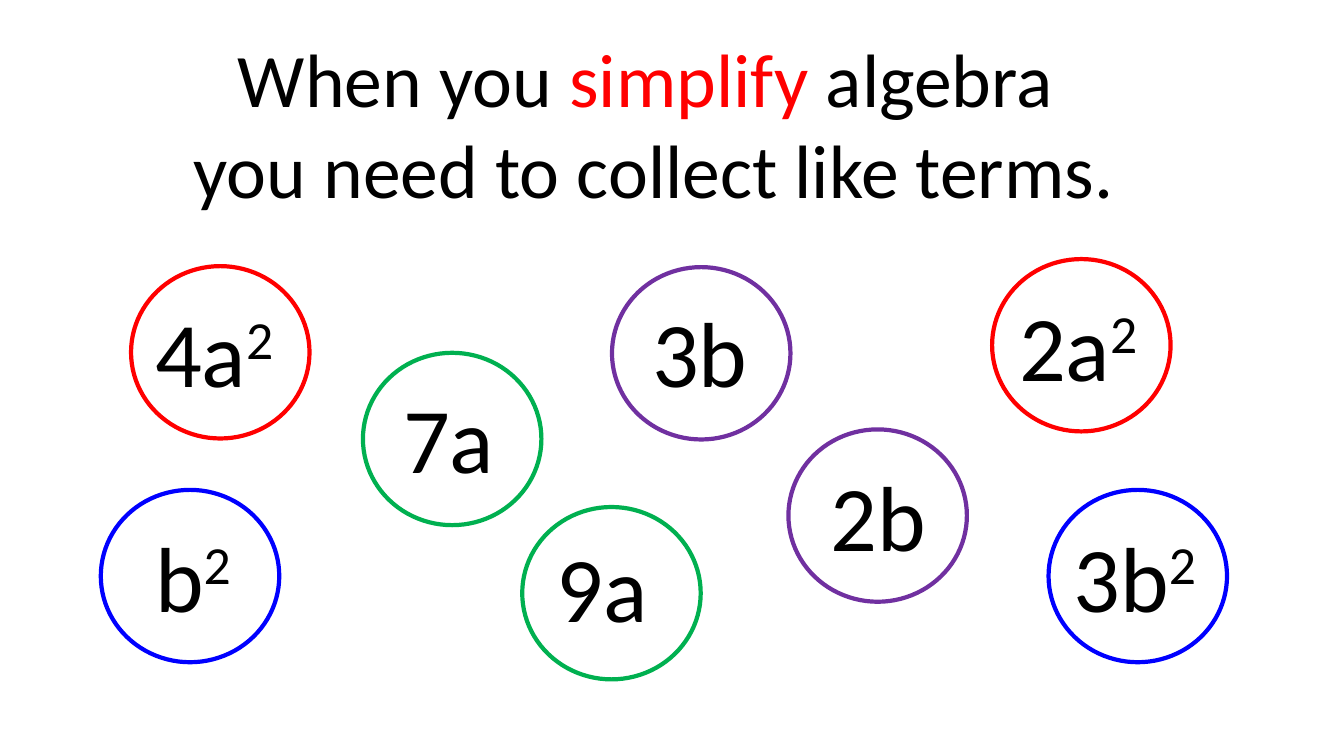
import pptx
import pptx.dml.color
import pptx.enum.shapes
import pptx.enum.text
import pptx.util

Inches = pptx.util.Inches

COLORS = {
    "text": "000000",
    "a_squared": "FF0000",
    "b_squared": "0000FF",
    "a": "00B050",
    "b": "7030A0",
}
CIRCLE_SIZE = (1.77, 1.71)
TERM_HEIGHT = 1.21

# coefficient and letter, power, text left, top, width, circle left, top, kind
TERMS = [
    ("4a", "2", 1.44, 2.88, 1.43, 1.3, 2.64, "a_squared"),
    ("7a", "", 3.9, 3.73, 1.12, 3.6, 3.5, "a"),
    ("3b", "", 6.37, 2.88, 1.16, 6.07, 2.65, "b"),
    ("2b", "", 8.14, 4.51, 1.16, 7.82, 4.26, "b"),
    ("9a", "", 5.42, 5.21, 1.12, 5.18, 5.03, "a"),
    ("2a", "2", 10.01, 2.82, 1.43, 9.84, 2.57, "a_squared"),
    ("b", "2", 1.44, 5.11, 1, 1, 4.86, "b_squared"),
    ("3b", "2", 10.55, 5.11, 1.47, 10.4, 4.86, "b_squared"),
]


def rgb(name):
    return pptx.dml.color.RGBColor.from_string(COLORS[name])


def set_all(target, values):
    for name, value in values.items():
        setattr(target, name, value)


def add_text_frame(s, left, top, width, height, wrap):
    box = s.shapes.add_textbox(
        Inches(left), Inches(top), Inches(width), Inches(height))
    tf = box.text_frame
    set_all(tf, {
        "word_wrap": wrap,
        "auto_size": pptx.enum.text.MSO_AUTO_SIZE.SHAPE_TO_FIT_TEXT,
    })
    return tf


def add_run(p, text, size, color="text"):
    r = p.add_run()
    r.text = text
    set_all(r.font, {"name": "Calibri", "size": pptx.util.Pt(size)})
    r.font.color.rgb = rgb(color)
    return r


def add_heading(s):
    tf = add_text_frame(s, 1.44, 0.27, 10.09, 1.92, True)
    lines = [
        [("When you ", "text"), ("simplify", "a_squared"), (" algebra ", "text")],
        [("you need to collect like terms.", "text")],
    ]
    for i, line in enumerate(lines):
        p = tf.add_paragraph() if i else tf.paragraphs[0]
        p.alignment = pptx.enum.text.PP_ALIGN.CENTER
        for text, color in line:
            add_run(p, text, 54, color)


def add_term(s, base, power, left, top, width):
    tf = add_text_frame(s, left, top, width, TERM_HEIGHT, False)
    p = tf.paragraphs[0]
    add_run(p, base, 66)
    if power:
        r = add_run(p, power, 66)
        r._r.get_or_add_rPr().set("baseline", "30000")


def add_circle(s, left, top, kind):
    width, height = CIRCLE_SIZE
    sp = s.shapes.add_shape(
        pptx.enum.shapes.MSO_SHAPE.OVAL,
        Inches(left), Inches(top), Inches(width), Inches(height))
    sp.shadow.inherit = False
    sp.fill.background()
    sp.line.color.rgb = rgb(kind)
    sp.line.width = pptx.util.Pt(3)


def main():
    prs = pptx.Presentation()
    set_all(prs, {"slide_width": Inches(13.33), "slide_height": Inches(7.5)})
    s = prs.slides.add_slide(prs.slide_layouts[6])
    add_heading(s)
    for base, power, left, top, width, *_ in TERMS:
        add_term(s, base, power, left, top, width)
    for *_, left, top, kind in TERMS:
        add_circle(s, left, top, kind)
    prs.save("out.pptx")


if __name__ == "__main__":
    main()
